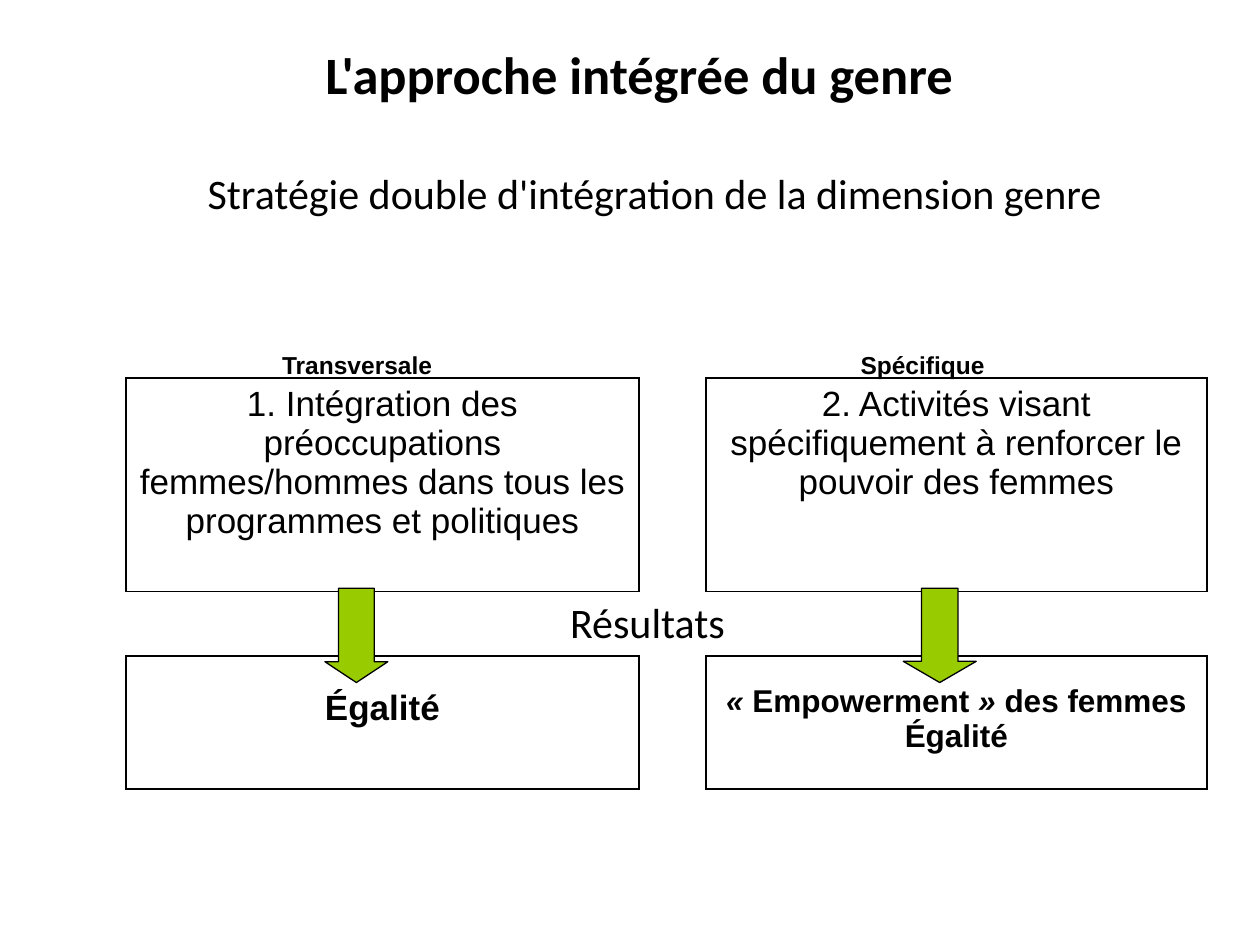
from lxml import etree
from pptx import Presentation
from pptx.dml.color import RGBColor
from pptx.enum import shapes, text
from pptx.oxml import ns
from pptx.util import Cm, Pt

TITLE = "L'approche intégrée du genre"
LABELS = [  # text, box in cm, format
    ("Stratégie double d'intégration de la dimension genre",
     (3.7, 3.25, 19, 1.27), dict(name="Calibri", size=Pt(24))),
    ("Transversale", (3.7, 6.93, 7, 0.8),
     dict(name="Arial", size=Pt(14), bold=True)),
    ("Spécifique", (15.1, 6.93, 7, 0.8),
     dict(name="Arial", size=Pt(14), bold=True)),
    ("Résultats", (10.87, 11.9, 4.37, 1.3),
     dict(name="Calibri", size=Pt(24))),
]
PLAIN = dict(name="Arial", size=Pt(20), bold=False)
BOLD = dict(PLAIN, bold=True)
SMALL = dict(BOLD, size=Pt(18))
SLANT = dict(SMALL, italic=True)
COLS = (10.34, 1.35, 10.1)
ROWS = (4.3, 1.3, 2.69)
CELLS = {  # row, column: top margin in cm, runs
    (0, 0): (0.13, [("1. Intégration des préoccupations femmes/hommes "
                     "dans tous les programmes et politiques", PLAIN)]),
    (0, 2): (0.13, [("2. Activités visant spécifiquement à renforcer le "
                     "pouvoir des femmes", PLAIN)]),
    (2, 0): (0.66, [("Égalité", BOLD)]),
    (2, 2): (0.56, [("« ", SLANT), ("Empowerment", SMALL), (" »", SLANT),
                    (" des femmes Égalité", SMALL)]),
}
ARROWS = [  # left, width, adjustments
    (6.55, 1.27, (0.57, 0.33)),
    (18.21, 1.47, (0.5, 0.29)),
]


def color(code):
    return RGBColor.from_string(code)


def write(para, runs):
    para.alignment = text.PP_ALIGN.CENTER
    for words, form in runs:
        run = para.add_run()
        run.text = words
        for key, value in form.items():
            setattr(run.font, key, value)
        run.font.color.rgb = color("000000")


def border(cell):
    """Draw a thin black line on all four sides."""
    props = cell._tc.get_or_add_tcPr()
    for side in "LRTB":
        line = etree.SubElement(props, ns.qn("a:ln" + side), w=str(Pt(1)))
        fill = etree.SubElement(line, ns.qn("a:solidFill"))
        etree.SubElement(fill, ns.qn("a:srgbClr"), val="000000")


def add_grid(slide):
    frame = slide.shapes.add_table(len(ROWS), len(COLS), Cm(2.54), Cm(7.62),
                                   Cm(sum(COLS)), Cm(sum(ROWS)))
    grid = frame.table
    grid.first_row = grid.horz_banding = False
    style = grid._tbl.tblPr.find(ns.qn("a:tableStyleId"))
    style.text = "{2D5ABB26-0587-4C30-8999-92F81FD0307C}"
    for col, width in zip(grid.columns, COLS):
        col.width = Cm(width)
    for row, height in zip(grid.rows, ROWS):
        row.height = Cm(height)
    for (row, col), (top, runs) in CELLS.items():
        cell = grid.cell(row, col)
        cell.margin_top = Cm(top)
        write(cell.text_frame.paragraphs[0], runs)
        border(cell)
    for cell in grid.iter_cells():
        cell.fill.background()


def add_arrow(slide, left, width, adjust):
    arrow = slide.shapes.add_shape(shapes.MSO_SHAPE.DOWN_ARROW, Cm(left),
                                   Cm(11.86), Cm(width), Cm(1.9))
    # The head length comes first in the preset: shaft width, then head
    for i, value in enumerate(adjust):
        arrow.adjustments[i] = value
    arrow.shadow.inherit = False
    arrow.fill.solid()
    arrow.fill.fore_color.rgb = color("99CC00")
    arrow.line.color.rgb = color("000000")
    arrow.line.width = Pt(0.75)


def main():
    deck = Presentation()
    deck.slide_width, deck.slide_height = Cm(25.4), Cm(19.05)
    slide = deck.slides.add_slide(deck.slide_layouts[5])
    title = slide.shapes.title
    title.left, title.top = Cm(2.69), Cm(0.53)
    title.width, title.height = Cm(20.4), Cm(1.9)
    title.text_frame.vertical_anchor = text.MSO_ANCHOR.MIDDLE
    write(title.text_frame.paragraphs[0],
          [(TITLE, dict(name="Calibri", size=Pt(30), bold=True))])
    add_grid(slide)
    for arrow in ARROWS:
        add_arrow(slide, *arrow)
    for words, box, form in LABELS:
        frame = slide.shapes.add_textbox(*map(Cm, box)).text_frame
        frame.word_wrap = True
        write(frame.paragraphs[0], [(words, form)])
    deck.save("out.pptx")


if __name__ == "__main__":
    main()
